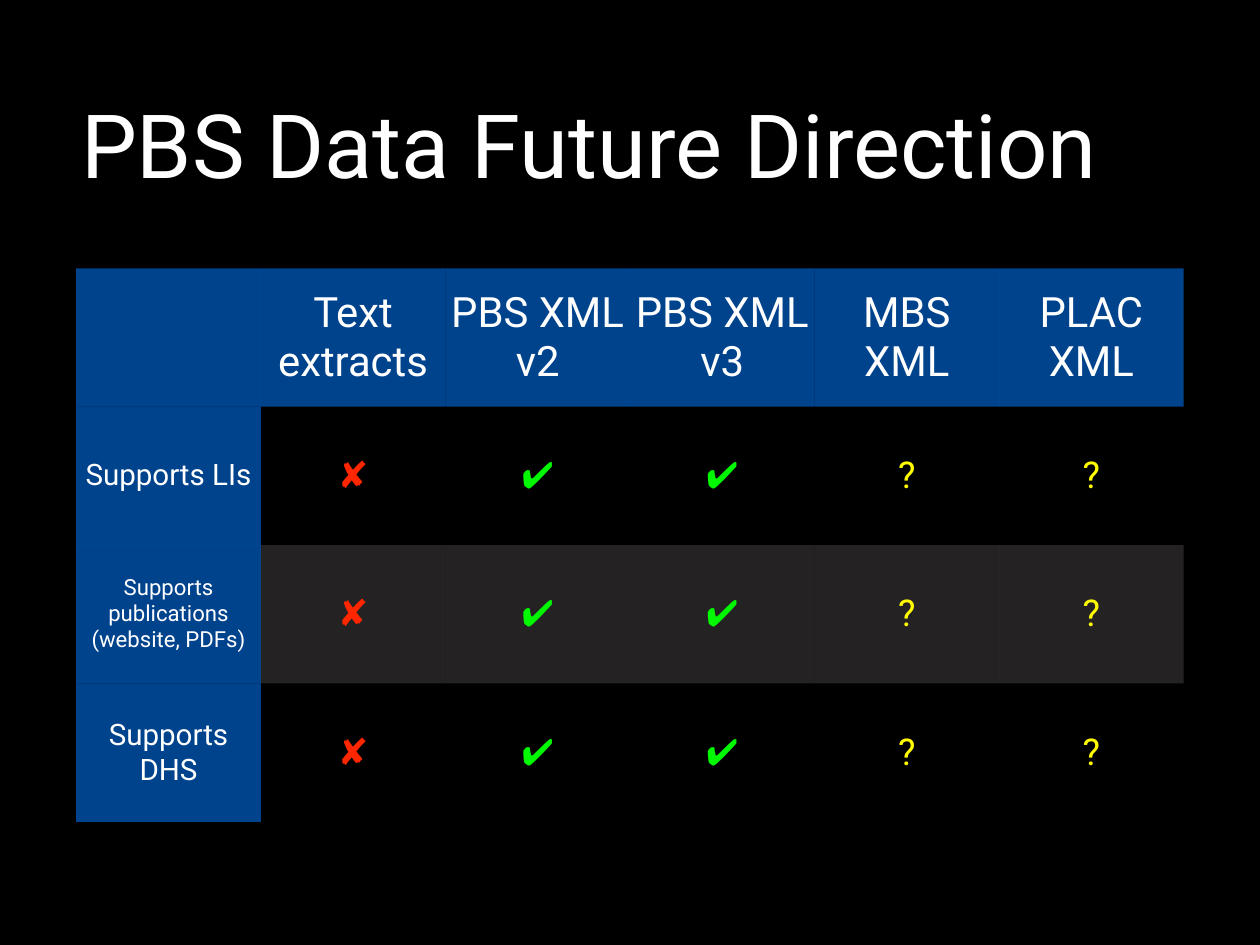
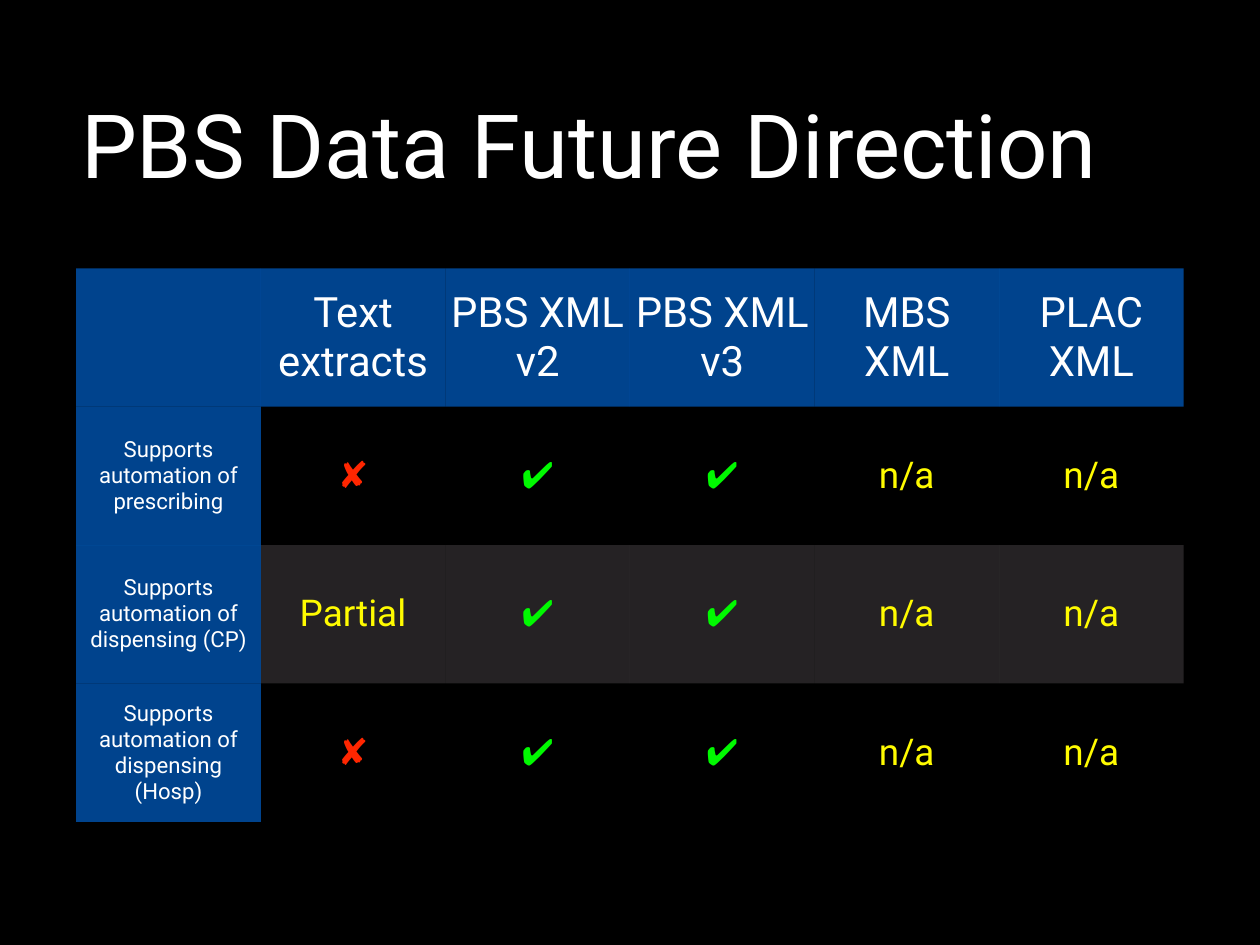
import pptx
import pptx.dml.color
import pptx.enum.text
import pptx.oxml.ns
import pptx.util
from lxml import etree

# Shared look
COLORS = {
    "background": "000000",
    "text": "FFFFFF",
    "heading": "0071EB",
    "band": "676164",
    "no": "FF2600",
    "yes": "00F900",
    "open": "FFFB00",
}
FONT = "Roboto"
TITLE = "PBS Data Future Direction"
TITLE_SIZE, HEADER_SIZE, MARK_SIZE = 72, 34, 30
HEADING_OPACITY, BAND_OPACITY = 60, 36
INSET = pptx.util.Pt(4)
PLAIN_TABLE_STYLE = "{2D5ABB26-0587-4C30-8999-92F81FD0307C}"

# Layout in inches
SLIDE_WIDTH, SLIDE_HEIGHT = 14.22, 10.67
LEFT, CONTENT_WIDTH = 0.86, 12.5
TITLE_TOP, TITLE_HEIGHT = 0.28, 2.67
TABLE_TOP, TABLE_HEIGHT = 3.03, 6.25

# Content: each row is (label, label size, marks)
HEADERS = ["", "Text extracts", "PBS XML v2", "PBS XML v3", "MBS XML", "PLAC XML"]
NO, YES = "✘", "✔︎"
MARK_COLORS = {NO: "no", YES: "yes"}
SUPPORT_MARKS = [NO, YES, YES, "?", "?"]
AUTOMATION_MARKS = [NO, YES, YES, "n/a", "n/a"]
SLIDES = [
    [
        ("Supports LIs", 24, SUPPORT_MARKS),
        ("Supports publications (website, PDFs)", 18, SUPPORT_MARKS),
        ("Supports DHS", 24, SUPPORT_MARKS),
    ],
    [
        ("Supports automation of prescribing", 18, AUTOMATION_MARKS),
        ("Supports automation of dispensing (CP)", 18, ["Partial"] + AUTOMATION_MARKS[1:]),
        ("Supports automation of dispensing (Hosp)", 18, AUTOMATION_MARKS),
    ],
]


def rgb(name):
    return pptx.dml.color.RGBColor.from_string(COLORS[name])


def box(*lengths):
    return [pptx.util.Inches(length) for length in lengths]


def set_insets(target):
    target.margin_left = target.margin_right = INSET
    target.margin_top = target.margin_bottom = INSET
    target.vertical_anchor = pptx.enum.text.MSO_ANCHOR.MIDDLE


def write(paragraph, text, size, color, alignment):
    paragraph.alignment = alignment
    run = paragraph.add_run()
    run.text = text
    run.font.name = FONT
    run.font.size = pptx.util.Pt(size)
    run.font.color.rgb = rgb(color)


def fill_cell(cell, color, opacity):
    cell.fill.solid()
    cell.fill.fore_color.rgb = rgb(color)
    color_element = cell._tc.tcPr.find(".//" + pptx.oxml.ns.qn("a:srgbClr"))
    alpha = etree.SubElement(color_element, pptx.oxml.ns.qn("a:alpha"))
    alpha.set("val", str(opacity * 1000))


def write_cell(cell, text, size, color):
    set_insets(cell)
    if text:
        write(cell.text_frame.paragraphs[0], text, size, color,
              pptx.enum.text.PP_ALIGN.CENTER)


def add_title(slide):
    title = slide.shapes.title
    title.left, title.top, title.width, title.height = box(
        LEFT, TITLE_TOP, CONTENT_WIDTH, TITLE_HEIGHT)
    frame = title.text_frame
    frame.word_wrap = True
    frame.auto_size = pptx.enum.text.MSO_AUTO_SIZE.NONE
    set_insets(frame)
    write(frame.paragraphs[0], TITLE, TITLE_SIZE, "text",
          pptx.enum.text.PP_ALIGN.LEFT)


def add_comparison(slide, rows):
    table = slide.shapes.add_table(
        len(rows) + 1, len(HEADERS),
        *box(LEFT, TABLE_TOP, CONTENT_WIDTH, TABLE_HEIGHT)).table
    table.first_col = True
    table.horz_banding = False
    style = table._tbl.tblPr.find(pptx.oxml.ns.qn("a:tableStyleId"))
    style.text = PLAIN_TABLE_STYLE

    # Header row
    for column, header in enumerate(HEADERS):
        cell = table.cell(0, column)
        write_cell(cell, header, HEADER_SIZE, "text")
        fill_cell(cell, "heading", HEADING_OPACITY)

    # Label column and marks, with every second row banded
    for row, (label, label_size, marks) in enumerate(rows, start=1):
        label_cell = table.cell(row, 0)
        write_cell(label_cell, label, label_size, "text")
        fill_cell(label_cell, "heading", HEADING_OPACITY)
        for column, mark in enumerate(marks, start=1):
            cell = table.cell(row, column)
            write_cell(cell, mark, MARK_SIZE, MARK_COLORS.get(mark, "open"))
            if row % 2 == 0:
                fill_cell(cell, "band", BAND_OPACITY)
            else:
                cell.fill.background()


def main():
    presentation = pptx.Presentation()
    presentation.slide_width, presentation.slide_height = box(SLIDE_WIDTH, SLIDE_HEIGHT)
    background = presentation.slide_master.background.fill
    background.solid()
    background.fore_color.rgb = rgb("background")
    title_only = presentation.slide_layouts.get_by_name("Title Only")
    for rows in SLIDES:
        slide = presentation.slides.add_slide(title_only)
        add_title(slide)
        add_comparison(slide, rows)
    presentation.save("out.pptx")


if __name__ == "__main__":
    main()
